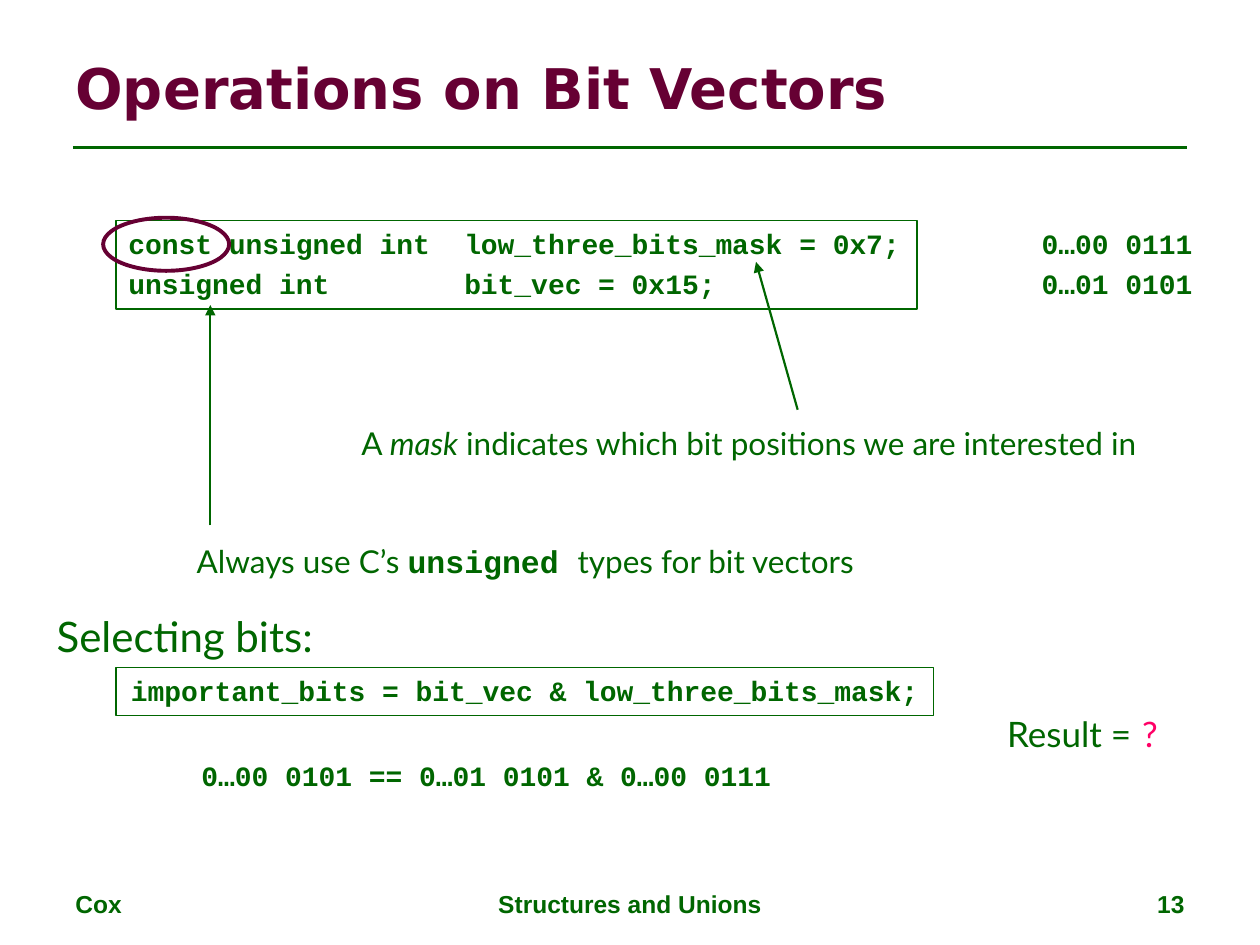
from collections import namedtuple

from lxml.etree import SubElement
from pptx import Presentation
from pptx.dml.color import RGBColor
from pptx.enum.shapes import MSO_CONNECTOR, MSO_SHAPE
from pptx.enum.text import MSO_ANCHOR, MSO_AUTO_SIZE, PP_ALIGN
from pptx.oxml.ns import qn
from pptx.util import Cm, Pt

GREEN = RGBColor(0x00, 0x66, 0x00)
MAROON = RGBColor(0x66, 0x00, 0x33)
PINK = RGBColor(0xFF, 0x00, 0x66)

LEFT, CENTER, RIGHT = PP_ALIGN.LEFT, PP_ALIGN.CENTER, PP_ALIGN.RIGHT

# Lengths in centimetres
Box = namedtuple("Box", "left top width height")
Style = namedtuple("Style", "font size color bold italic", defaults=(GREEN, False, False))

TITLE = Style("DejaVu Sans", 32, MAROON, True)
FOOTER = Style("Arial", 14, bold=True)
CODE = Style("Courier New", 16, bold=True)
NOTE = Style("Lato", 18)
HEADING = Style("Lato", 24)
RESULT = Style("Lato", 20)


def inner(region, left, top, width, height):
    """Box placed relative to the top left corner of a region."""
    return Box(region.left + left, region.top + top, width, height)


def add_spans(para, spans):
    for words, style in spans:
        span = para.add_run()
        span.text = words
        font = span.font
        font.name, font.size = style.font, Pt(style.size)
        font.bold, font.italic = style.bold, style.italic
        font.color.rgb = style.color


def add_text(page, box, lines, align=LEFT, wrap=False, before=0, tab=None, border=False):
    """Text box; each line is a list of (words, style) spans."""
    shape = page.shapes.add_textbox(*map(Cm, box))
    frame = shape.text_frame
    frame.word_wrap = wrap
    frame.auto_size = MSO_AUTO_SIZE.NONE if wrap else MSO_AUTO_SIZE.SHAPE_TO_FIT_TEXT
    if wrap:
        frame.vertical_anchor = MSO_ANCHOR.MIDDLE
    if border:
        shape.line.color.rgb = GREEN
        shape.line.width = Pt(0.75)
    for index, spans in enumerate(lines):
        para = frame.add_paragraph() if index else frame.paragraphs[0]
        para.alignment = align
        para.space_before = Pt(before)
        if tab:
            stops = SubElement(para._p.get_or_add_pPr(), qn("a:tabLst"))
            SubElement(stops, qn("a:tab"), pos=str(Cm(tab)), algn="l")
        add_spans(para, spans)


def add_line(page, region, start, end, width, arrow=False):
    points = [Cm(base + offset) for point in (start, end)
              for base, offset in zip((region.left, region.top), point)]
    line = page.shapes.add_connector(MSO_CONNECTOR.STRAIGHT, *points)
    line.line.color.rgb = GREEN
    line.line.width = Pt(width)
    if arrow:
        SubElement(line.line._get_or_add_ln(), qn("a:tailEnd"), type="triangle")
    SubElement(line._element.spPr, qn("a:effectLst"))


def add_header(page, region):
    add_line(page, region, (0.2, 2.21), (22.66, 2.21), 1.5)
    add_text(page, inner(region, 0, 0, region.width, 1.98),
             [[("Operations on Bit Vectors", TITLE)]], wrap=True)


def add_footer(page, region):
    side, middle = 5.92, 8.05
    parts = [
        ("Cox", 0, side, LEFT),
        ("Structures and Unions", (region.width - middle) / 2, middle, CENTER),
        ("13", region.width - side, side, RIGHT),
    ]
    for words, left, width, align in parts:
        add_text(page, inner(region, left, 0, width, region.height),
                 [[(words, FOOTER)]], align, wrap=True)


def add_declarations(page, region):
    # Code, with the variable names lined up on a tab stop
    add_text(page, inner(region, 0.26, 0.06, 16.15, 1.78),
             [[("const unsigned int\tlow_three_bits_mask = 0x7;", CODE)],
              [("unsigned int\tbit_vec = 0x15;", CODE)]],
             before=3.5, tab=6.77, border=True)
    # Binary values
    add_text(page, inner(region, 18.67, 0.06, 3.56, 1.75),
             [[("0…00 0111", CODE)], [("0…01 0101", CODE)]], before=3.5)
    # Ring around "const"
    ring = page.shapes.add_shape(MSO_SHAPE.OVAL, *map(Cm, inner(region, 0, 0, 2.54, 1.07)))
    ring.shadow.inherit = False
    ring.fill.background()
    ring.line.color.rgb = MAROON
    ring.line.width = Pt(2.25)


def add_notes_on_code(page, region):
    # Note on unsigned types
    add_line(page, region, (0.56, 5.31), (0.56, 0.87), 1.25, arrow=True)
    add_text(page, inner(region, 0, 5.52, 13.82, 1.02),
             [[("Always use C’s ", NOTE),
               ("unsigned ", NOTE._replace(font="Courier New", bold=True)),
               ("types for bit vectors", NOTE)]], CENTER)
    # Note on the mask
    add_text(page, inner(region, 3.23, 3.15, 16.38, 1.02),
             [[("A ", NOTE), ("mask", NOTE._replace(italic=True)),
               (" indicates which bit positions we are interested in", NOTE)]], CENTER)
    add_line(page, region, (12.4, 2.98), (11.56, 0), 1.25, arrow=True)


def add_selection(page, region):
    add_text(page, inner(region, 0, 0, 5.77, 1.27), [[("Selecting bits:", HEADING)]], CENTER)
    add_text(page, inner(region, 1.5, 1.27, 16.48, 0.96),
             [[("important_bits = bit_vec & low_three_bits_mask;", CODE)]],
             CENTER, border=True)
    add_text(page, inner(region, 19.1, 1.91, 3.76, 1.27),
             [[("Result =", RESULT), (" ", HEADING),
               ("?", RESULT._replace(color=PINK))]], CENTER)
    add_text(page, inner(region, 2.97, 2.97, 12.07, 0.94),
             [[("0…00 0101 == 0…01 0101 & 0…00 0111", CODE)]])


def main():
    deck = Presentation()
    deck.slide_width, deck.slide_height = Cm(25.4), Cm(19.05)
    page = deck.slides.add_slide(deck.slide_layouts[6])
    add_header(page, Box(1.27, 0.76, 22.86, 2.21))
    add_footer(page, Box(1.27, 17.78, 22.86, 0.89))
    add_declarations(page, Box(2.08, 4.39, 22.23, 1.84))
    add_notes_on_code(page, Box(3.68, 5.28, 19.61, 6.54))
    add_selection(page, Box(0.84, 12.19, 22.86, 3.91))
    deck.save("out.pptx")


if __name__ == "__main__":
    main()
